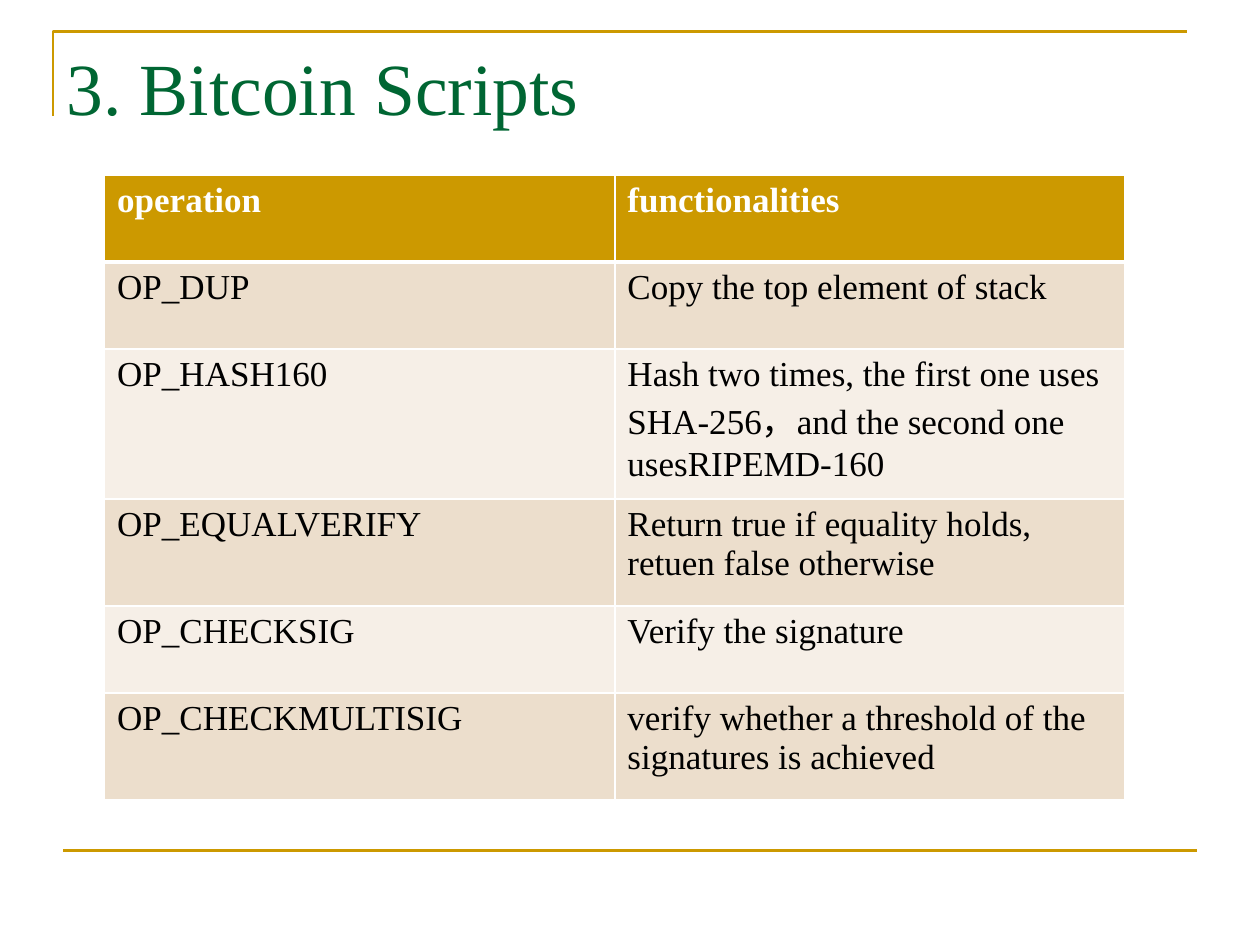
"""Build a slide with a two-column table of script operations."""
import pptx
import pptx.dml.color
import pptx.enum.shapes
import pptx.enum.text
import pptx.oxml
import pptx.oxml.ns
import pptx.util
import lxml.etree

inch = pptx.util.Inches
qn = pptx.oxml.ns.qn
gold = "CC9900"
white = "FFFFFF"
bands = ["F6EFE7", "ECDECC"]


def tone(code):
    return pptx.dml.color.RGBColor.from_string(code)


def write(frame, text, size=20, hue="000000", bold=False):
    frame.word_wrap = True
    run = frame.paragraphs[0].add_run()
    run.text = text
    run.font.name = "Times New Roman"
    run.font.size = pptx.util.Pt(size)
    run.font.bold = bold
    run.font.color.rgb = tone(hue)


deck = pptx.Presentation()
deck.slide_width, deck.slide_height = inch(10), inch(7.5)
slide = deck.slides.add_slide(deck.slide_layouts[6])
shapes = slide.shapes

pen = shapes.build_freeform(inch(0.42), inch(0.92))
pen.add_line_segments([(inch(0.42), inch(0.25)), (inch(9.42), inch(0.25))], close=False)
frame = pen.convert_to_shape()
frame.fill.background()
frame.shadow.inherit = False
rule = shapes.add_connector(
    pptx.enum.shapes.MSO_CONNECTOR.STRAIGHT,
    inch(0.5), inch(6.75), inch(9.5), inch(6.75),
)
for mark in (frame, rule):
    mark.line.color.rgb = tone(gold)
    mark.line.width = pptx.util.Pt(1.5)
lxml.etree.SubElement(rule._element.spPr, qn("a:effectLst"))

rows = [
    (0.69, "operation", "functionalities"),
    (0.69, "OP_DUP", "Copy the top element of stack"),
    (1.19, "OP_HASH160", "Hash two times, the first one uses SHA-256，and the second one usesRIPEMD-160"),
    (0.85, "OP_EQUALVERIFY", "Return true if equality holds, retuen false otherwise"),
    (0.69, "OP_CHECKSIG", "Verify the signature"),
    (0.85, "OP_CHECKMULTISIG", "verify whether a threshold of the signatures is achieved"),
]
high = sum(row[0] for row in rows)
table = shapes.add_table(
    len(rows), 2, inch(0.83), inch(1.39), inch(8.1), inch(high)
).table
for r, (tall, *words) in enumerate(rows):
    table.rows[r].height = inch(tall)
    head = r == 0
    for c, text in enumerate(words):
        cell = table.cell(r, c)
        props = cell._tc.get_or_add_tcPr()
        for side in "LRTB":
            thick = (r, side) in [(0, "B"), (1, "T")]
            edge = lxml.etree.SubElement(props, qn("a:ln" + side))
            edge.set("w", str(pptx.util.Pt(3 if thick else 1)))
            fill = lxml.etree.SubElement(edge, qn("a:solidFill"))
            lxml.etree.SubElement(fill, qn("a:srgbClr")).set("val", white)
        cell.fill.solid()
        cell.fill.fore_color.rgb = tone(gold if head else bands[r % 2])
        write(cell.text_frame, text, hue=white if head else "000000", bold=head)

title = shapes.add_textbox(inch(0.43), inch(0.25), inch(8.5), inch(0.83))
title.text_frame.vertical_anchor = pptx.enum.text.MSO_ANCHOR.BOTTOM
write(title.text_frame, "3. Bitcoin Scripts", size=42, hue="006633")

deck.save("out.pptx")
